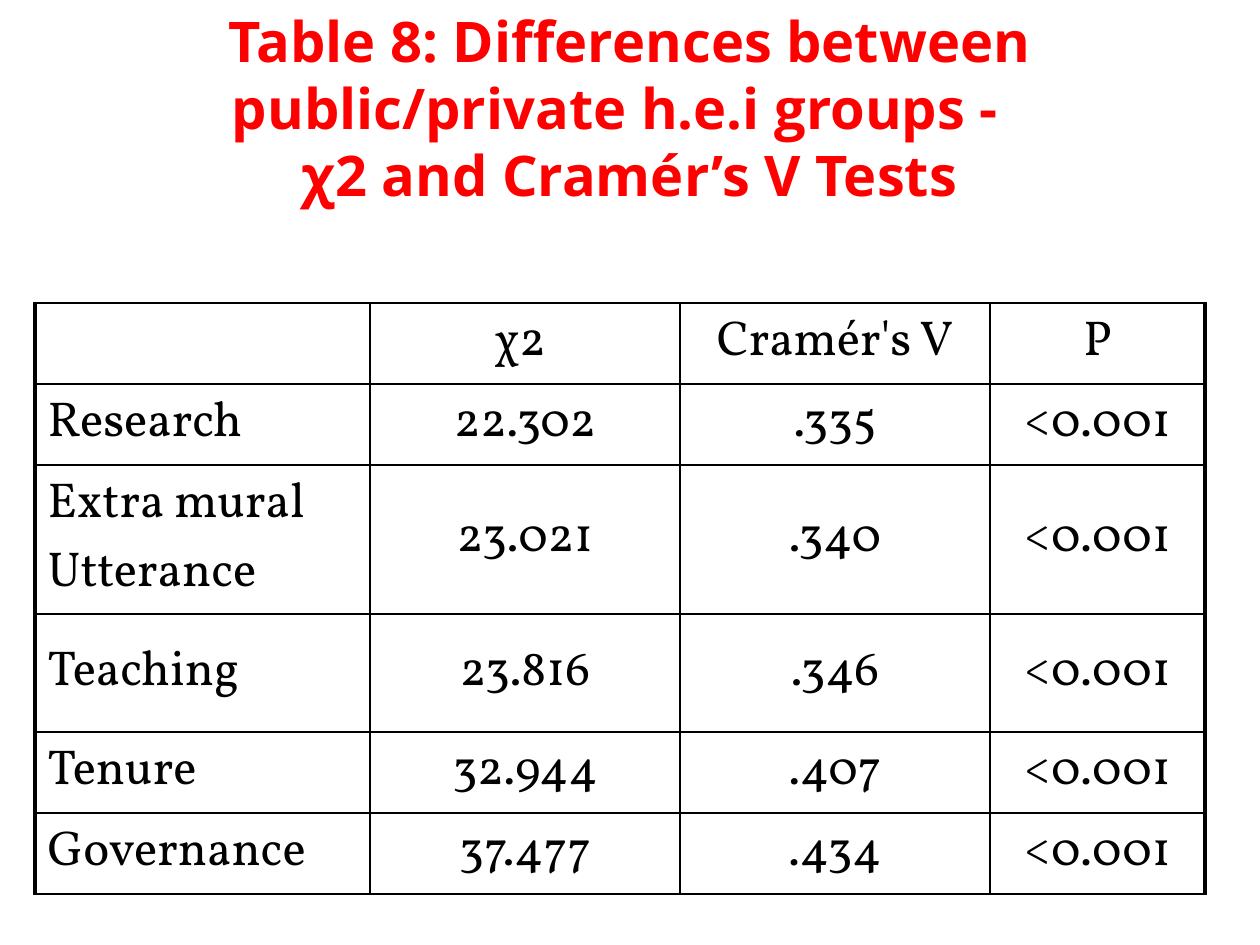
from dataclasses import dataclass
from typing import NamedTuple

from lxml.etree import SubElement
from pptx import Presentation
from pptx.dml.color import RGBColor
from pptx.enum.text import MSO_ANCHOR as Anchor, MSO_AUTO_SIZE as AutoSize, PP_ALIGN as Align
from pptx.oxml.ns import qn
from pptx.util import Emu, Pt

EMU_PER_PX = 914400 / 126


def px(length: int) -> Emu:
    return Emu(round(length * EMU_PER_PX))


@dataclass(frozen=True)
class Theme:
    heading: str = "FF0000"
    ink: str = "000000"
    heading_font: str = "Open Sans"
    table_font: str = "Vollkorn"
    heading_size: int = 32
    table_size: int = 28
    outer_line: float = 2.25
    inner_line: float = 1


class TestRow(NamedTuple):
    label: str
    chi_square: str
    cramer_v: str
    p_value: str
    min_height: int


THEME = Theme()
HEADING = ["Table 8: Differences between public/private h.e.i groups -  ",
           "χ2 and Cramér’s V Tests"]
COLUMN_WIDTHS = [335, 310, 310, 215]
TABLE_HEIGHT = 552
TESTS = [
    TestRow("", "χ2 ", "Cramér's V", "P", 18),
    TestRow("Research", "22.302", ".335", "<0.001", 80),
    TestRow("Extra mural Utterance", "23.021", ".340", "<0.001", 80),
    TestRow("Teaching", "23.816", ".346", "<0.001", 118),
    TestRow("Tenure", "32.944", ".407", "<0.001", 80),
    TestRow("Governance", "37.477", ".434", "<0.001", 0),
]


def write(frame, lines: list[str], *, font: str, size: int, color: str,
          bold: bool = False, align=Align.LEFT) -> None:
    frame.word_wrap = True
    frame.text = "\n".join(lines)
    for paragraph in frame.paragraphs:
        paragraph.alignment = align
        for run in paragraph.runs:
            run.font.name = font
            run.font.size = Pt(size)
            run.font.bold = bold
            run.font.color.rgb = RGBColor.from_string(color)


def draw_borders(cell, first: bool, last: bool) -> None:
    widths = {
        "a:lnL": THEME.outer_line if first else THEME.inner_line,
        "a:lnR": THEME.outer_line if last else THEME.inner_line,
        "a:lnT": THEME.inner_line,
        "a:lnB": THEME.inner_line,
    }
    properties = cell._tc.get_or_add_tcPr()
    for position, (side, width) in enumerate(widths.items()):
        border = SubElement(properties, qn(side), w=str(int(Pt(width))))
        fill = SubElement(border, qn("a:solidFill"))
        SubElement(fill, qn("a:srgbClr"), val=THEME.ink)
        properties.insert(position, border)


def draw_heading(slide) -> None:
    heading = slide.shapes.title
    heading.left, heading.top = px(0), px(-19)
    heading.width, heading.height = px(1260), px(253)
    frame = heading.text_frame
    frame.auto_size = AutoSize.NONE
    frame.vertical_anchor = Anchor.TOP
    frame.margin_left = frame.margin_right = px(30)
    frame.margin_top = frame.margin_bottom = px(25)
    write(frame, HEADING, font=THEME.heading_font, size=THEME.heading_size,
          color=THEME.heading, bold=True, align=Align.CENTER)


def draw_tests(slide) -> None:
    results = slide.shapes.add_table(
        len(TESTS), len(COLUMN_WIDTHS), px(35), px(303),
        px(sum(COLUMN_WIDTHS)), px(TABLE_HEIGHT))
    table = results.table
    table.first_row = table.horz_banding = False
    for column, width in zip(table.columns, COLUMN_WIDTHS):
        column.width = px(width)
    last_row, last_column = len(TESTS) - 1, len(COLUMN_WIDTHS) - 1
    for r, test in enumerate(TESTS):
        table.rows[r].height = px(test.min_height)
        for c, value in enumerate(test[:-1]):
            cell = table.cell(r, c)
            cell.fill.background()
            draw_borders(cell, c == 0, c == last_column)
            at_top = r == 0 or (r == last_row and c == 0)
            cell.vertical_anchor = Anchor.TOP if at_top else Anchor.MIDDLE
            if value:
                write(cell.text_frame, [value], font=THEME.table_font,
                      size=THEME.table_size, color=THEME.ink,
                      align=Align.CENTER if c else Align.LEFT)
    results.height = px(TABLE_HEIGHT)


def main() -> None:
    deck = Presentation()
    deck.slide_width, deck.slide_height = px(1260), px(945)
    slide = deck.slides.add_slide(deck.slide_layouts[5])
    draw_heading(slide)
    draw_tests(slide)
    deck.save("out.pptx")


if __name__ == "__main__":
    main()
